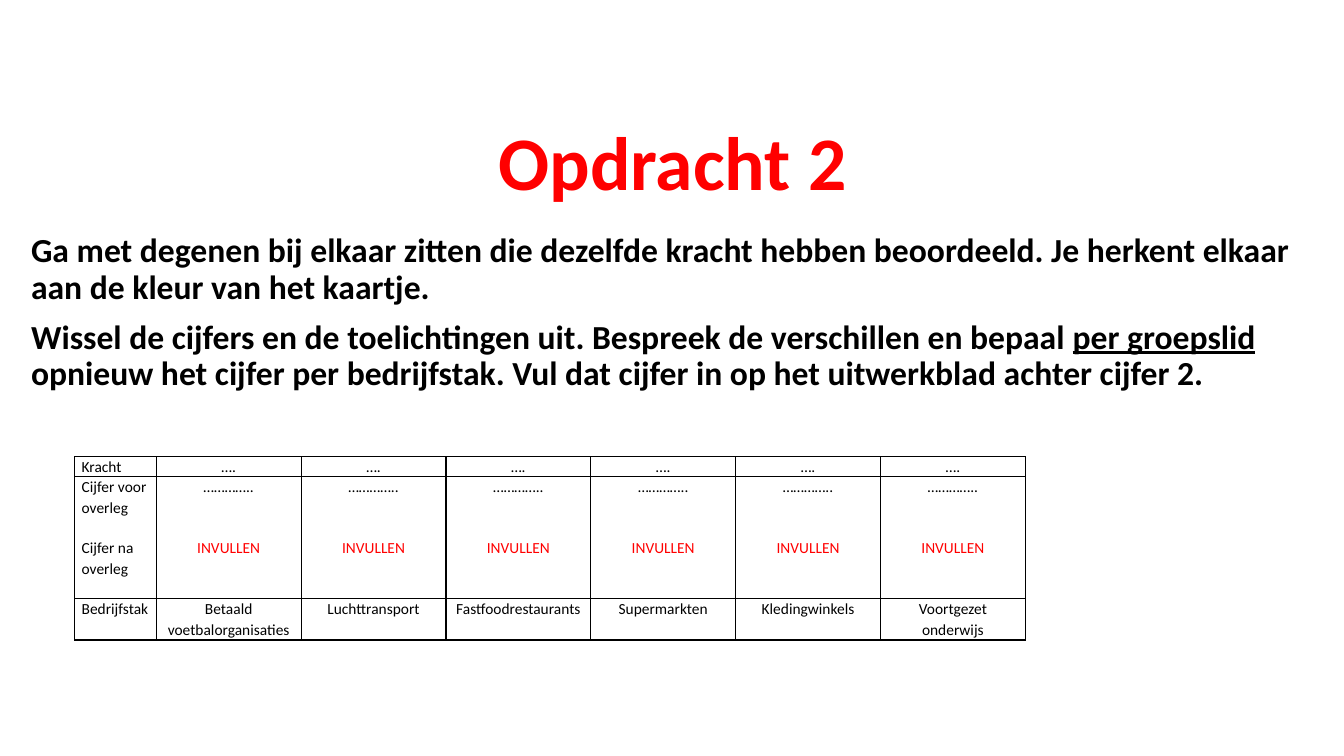
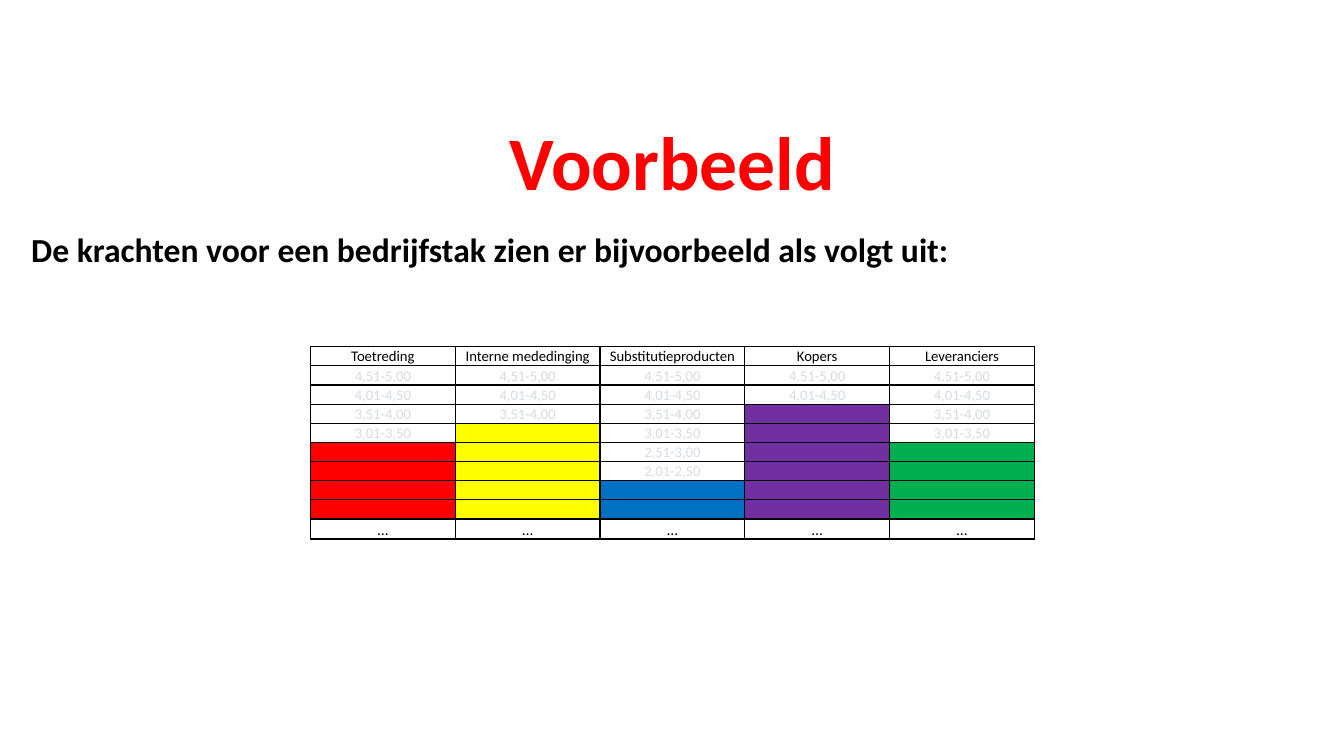
from dataclasses import dataclass

from lxml import etree
from pptx import Presentation
from pptx.dml.color import RGBColor
from pptx.enum.text import MSO_ANCHOR, PP_ALIGN
from pptx.oxml.ns import qn
from pptx.util import Inches, Pt

LEFT, CENTER = PP_ALIGN.LEFT, PP_ALIGN.CENTER
TOP, BOTTOM = MSO_ANCHOR.TOP, MSO_ANCHOR.BOTTOM


@dataclass(frozen=True)
class Theme:
    font: str = "Calibri"
    ink: str = "000000"
    accent: str = "FF0000"
    faded: str = "D5DCE4"
    yellow: str = "FFFF00"
    blue: str = "0070C0"
    purple: str = "7030A0"
    green: str = "00B050"
    title_size: float = 54
    body_size: float = 24
    table_size: float = 11
    scale_size: float = 10.5
    text_spacing: float = 0.9
    cell_spacing: float = 1.07
    cell_line: float = 14.5
    cell_inset: float = 0.07


THEME = Theme()
SLIDE_SIZE = (13.33, 7.5)
TITLE_BOX = (1.67, 1.23, 10, 0.87)
BODY_BOX = (0.21, 2.27, 12.79, 4.22)
FORM_BOX = (0.74, 4.53, 9.43, 1.82)
SCALE_BOX = (3.08, 3.44, 7.18, 1.91)

SECTORS = [
    ["Betaald voetbalorganisaties"],
    ["Luchttransport"],
    ["Fastfoodrestaurants"],
    ["Supermarkten"],
    ["Kledingwinkels"],
    ["Voortgezet", "onderwijs"],
]
SCORE_RANGES = ["4,51-5,00", "4,01-4,50", "3,51-4,00", "3,01-3,50", "2,51-3,00", "2,01-2,50"]
SCORE_STEPS = 8
FORCES = [
    ("Toetreding", THEME.accent, 4),
    ("Interne mededinging", THEME.yellow, 3),
    ("Substitutieproducten", THEME.blue, 6),
    ("Kopers", THEME.purple, 2),
    ("Leveranciers", THEME.green, 4),
]


def add_run(paragraph, text, size, color=THEME.ink, bold=False, underline=False):
    run = paragraph.add_run()
    run.text = text
    run.font.name = THEME.font
    run.font.size = Pt(size)
    run.font.bold = bold
    run.font.underline = underline
    run.font.color.rgb = RGBColor.from_string(color)


def add_paragraph(frame, index, alignment, line_spacing, space_before=0):
    paragraph = frame.add_paragraph() if index else frame.paragraphs[0]
    paragraph.alignment = alignment
    paragraph.line_spacing = line_spacing
    paragraph.space_before = Pt(space_before if index else 0)
    return paragraph


def add_text_frame(slide, box, anchor):
    frame = slide.shapes.add_textbox(*map(Inches, box)).text_frame
    frame.word_wrap = True
    frame.vertical_anchor = anchor
    return frame


def add_heading(slide, text):
    frame = add_text_frame(slide, TITLE_BOX, BOTTOM)
    paragraph = add_paragraph(frame, 0, CENTER, THEME.text_spacing)
    add_run(paragraph, text, THEME.title_size, THEME.accent, bold=True)


def add_body(slide, paragraphs):
    frame = add_text_frame(slide, BODY_BOX, TOP)
    for index, runs in enumerate(paragraphs):
        paragraph = add_paragraph(frame, index, LEFT, THEME.text_spacing, 10)
        for text, underline in runs:
            add_run(paragraph, text, THEME.body_size, bold=True, underline=underline)


def style_cell(cell, fill=None):
    cell.margin_left = cell.margin_right = Inches(THEME.cell_inset)
    cell.margin_top = cell.margin_bottom = 0
    properties = cell._tc.get_or_add_tcPr()
    for side in ("a:lnL", "a:lnR", "a:lnT", "a:lnB"):
        line = etree.SubElement(properties, qn(side), w=str(Pt(1)))
        solid = etree.SubElement(line, qn("a:solidFill"))
        etree.SubElement(solid, qn("a:srgbClr"), val=THEME.ink)
    if fill:
        cell.fill.solid()
        cell.fill.fore_color.rgb = RGBColor.from_string(fill)
    else:
        cell.fill.background()


def fill_cell(cell, lines, size, alignment=CENTER, color=THEME.ink, gap=0):
    for index, text in enumerate(lines):
        paragraph = add_paragraph(cell.text_frame, index, alignment, THEME.cell_spacing, gap)
        last_color = THEME.accent if index and gap and alignment == CENTER else color
        add_run(paragraph, text, size, last_color)


def color_cell(cell, color, size):
    style_cell(cell, color)
    paragraph = cell.text_frame.paragraphs[0]
    etree.SubElement(paragraph._p, qn("a:endParaRPr"), sz=str(int(size * 100)))


def add_grid(slide, box, column_widths, row_heights):
    shape = slide.shapes.add_table(len(row_heights), len(column_widths), *map(Inches, box))
    table = shape.table
    table.first_row = table.horz_banding = False
    for column, width in zip(table.columns, column_widths):
        column.width = Inches(width)
    for row, height in zip(table.rows, row_heights):
        row.height = Inches(height)
    return table


def add_score_form(slide, box):
    label_width = 0.81
    sector_width = (box[2] - label_width) / len(SECTORS)
    widths = [label_width] + [sector_width] * len(SECTORS)
    table = add_grid(slide, box, widths, [0.2, 1.21, 0.41])
    labels = [["Kracht"], ["Cijfer voor overleg", "Cijfer na overleg"], ["Bedrijfstak"]]
    columns = [labels] + [[["…."], ["…………..", "INVULLEN"], sector] for sector in SECTORS]
    for column_index, column in enumerate(columns):
        alignment = CENTER if column_index else LEFT
        blank_lines = 2 if column_index else 1
        for row_index, lines in enumerate(column):
            cell = table.cell(row_index, column_index)
            style_cell(cell)
            gap = blank_lines * THEME.cell_line if row_index == 1 else 0
            fill_cell(cell, lines, THEME.table_size, alignment, gap=gap)


def add_force_scale(slide, box):
    widths = [box[2] / len(FORCES)] * len(FORCES)
    table = add_grid(slide, box, widths, [0.19] * (SCORE_STEPS + 1) + [0.2])
    for column_index, (force, color, open_steps) in enumerate(FORCES):
        texts = [(force, THEME.scale_size, THEME.ink)]
        texts += [(score, THEME.scale_size, THEME.faded) for score in SCORE_RANGES[:open_steps]]
        texts += [None] * (SCORE_STEPS - open_steps)
        texts.append(("…", THEME.table_size, THEME.ink))
        for row_index, entry in enumerate(texts):
            cell = table.cell(row_index, column_index)
            if entry is None:
                color_cell(cell, color, THEME.scale_size)
                continue
            text, size, text_color = entry
            style_cell(cell)
            fill_cell(cell, [text], size, color=text_color)


def add_slide(presentation, title, body):
    slide = presentation.slides.add_slide(presentation.slide_layouts[6])
    add_heading(slide, title)
    add_body(slide, body)
    return slide


def main():
    presentation = Presentation()
    presentation.slide_width, presentation.slide_height = map(Inches, SLIDE_SIZE)

    assignment = add_slide(presentation, "Opdracht 2", [
        [("Ga met degenen bij elkaar zitten die dezelfde kracht hebben beoordeeld. "
          "Je herkent elkaar aan de kleur van het kaartje.", False)],
        [("Wissel de cijfers en de toelichtingen uit. Bespreek de verschillen en bepaal ", False),
         ("per groepslid", True),
         (" opnieuw het cijfer per bedrijfstak. "
          "Vul dat cijfer in op het uitwerkblad achter cijfer 2.", False)],
    ])
    add_score_form(assignment, FORM_BOX)

    example = add_slide(presentation, "Voorbeeld", [
        [("De krachten voor een bedrijfstak zien er bijvoorbeeld als volgt uit:", False)],
    ])
    add_force_scale(example, SCALE_BOX)

    presentation.save("out.pptx")


if __name__ == "__main__":
    main()
